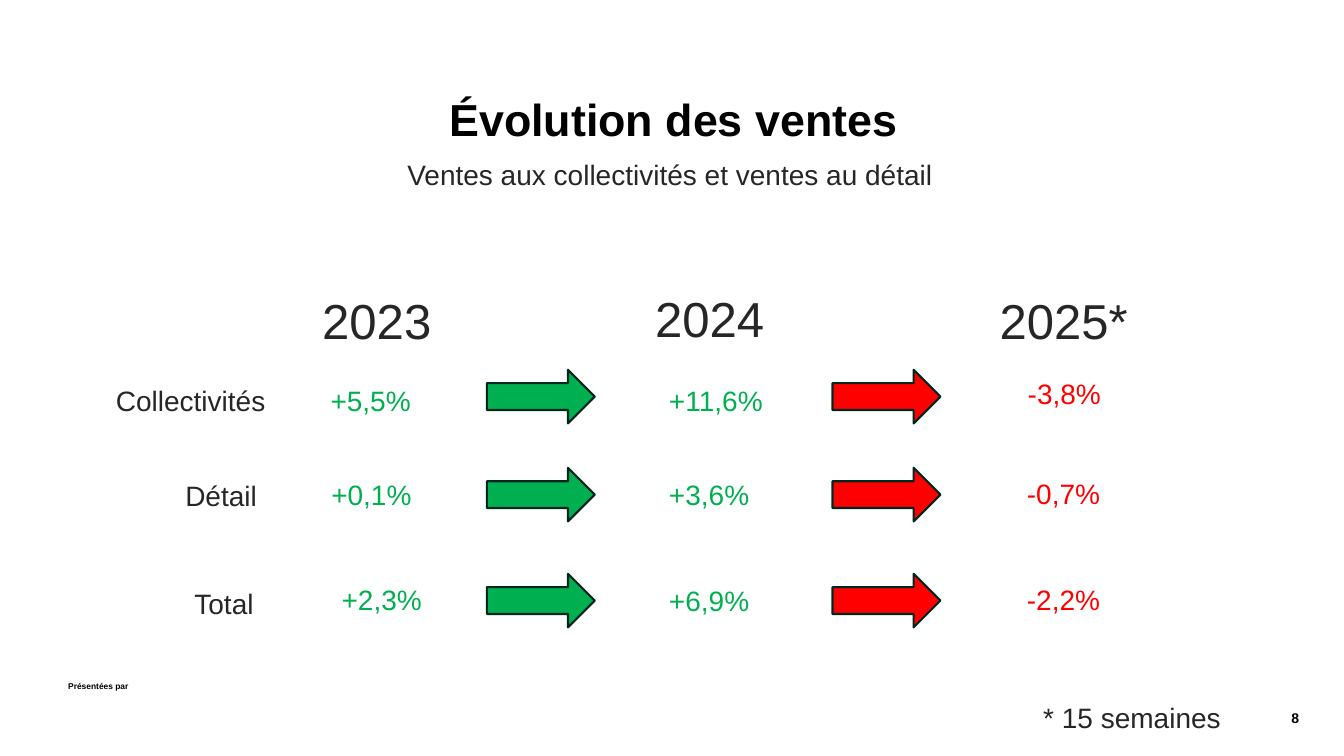
from pptx import Presentation
from pptx.dml.color import RGBColor
from pptx.enum.shapes import MSO_SHAPE
from pptx.enum.text import MSO_ANCHOR, MSO_AUTO_SIZE, PP_ALIGN
from pptx.util import Cm, Pt

RIGHT_ARROW = MSO_SHAPE.RIGHT_ARROW
TOP = MSO_ANCHOR.TOP
NO_AUTOFIT = MSO_AUTO_SIZE.NONE
LEFT = PP_ALIGN.LEFT
RIGHT = PP_ALIGN.RIGHT

BLACK = RGBColor(0x00, 0x00, 0x00)
DARK_GREY = RGBColor(0x26, 0x26, 0x26)
GREEN = RGBColor(0x00, 0xB0, 0x50)
RED = RGBColor(0xFF, 0x00, 0x00)
ARROW_LINE = RGBColor(0x00, 0x27, 0x1F)

FONT = "Arial"
ARROW_COLUMNS = ((12.27, GREEN), (20.98, RED))
VALUE_COLORS = (GREEN, GREEN, RED)

YEARS = (
    ("2023", 7.87, 7.19, 3.38, 35.1),
    ("2024", 16.26, 7.14, 3.38, 35.1),
    ("2025*", 24.94, 7.19, 4.45, 35),
)

ROWS = (
    (("Collectivités", 2.67, 9.53, 5.23), 9.32,
     (("+5,5%", 8.08, 9.55), ("+11,6%", 16.61, 9.55), ("-3,8%", 25.65, 9.37))),
    (("Détail", 4.42, 11.94, 3.73), 11.79,
     (("+0,1%", 8.1, 11.91), ("+3,6%", 16.61, 11.91), ("-0,7%", 25.63, 11.89))),
    (("Total", 4.65, 14.66, 3.73), 14.46,
     (("+2,3%", 8.36, 14.55), ("+6,9%", 16.61, 14.58), ("-2,2%", 25.63, 14.55))),
)


def write_text(shape, text, size, color, bold=False, align=LEFT):
    frame = shape.text_frame
    frame.word_wrap = True
    frame.auto_size = NO_AUTOFIT
    frame.vertical_anchor = TOP
    paragraph = frame.paragraphs[0]
    paragraph.text = text
    paragraph.alignment = align
    paragraph.space_before = Pt(0)
    paragraph.font.name = FONT
    paragraph.font.size = Pt(size)
    paragraph.font.bold = bold
    paragraph.font.color.rgb = color
    return paragraph


def fill_placeholder(shape, text, left, top, width, height, size, color, bold=False):
    shape.left, shape.top = Cm(left), Cm(top)
    shape.width, shape.height = Cm(width), Cm(height)
    return write_text(shape, text, size, color, bold)


def add_text(slide, text, left, top, width, height, size=20, color=DARK_GREY,
             bold=False, align=LEFT):
    box = slide.shapes.add_textbox(Cm(left), Cm(top), Cm(width), Cm(height))
    write_text(box, text, size, color, bold, align)


def add_arrow(slide, left, top, color):
    arrow = slide.shapes.add_shape(RIGHT_ARROW, Cm(left), Cm(top), Cm(2.72), Cm(1.35))
    arrow.shadow.inherit = False
    arrow.fill.solid()
    arrow.fill.fore_color.rgb = color
    arrow.line.color.rgb = ARROW_LINE
    arrow.line.width = Pt(1.5)


def add_sales_row(slide, label, arrow_top, values):
    add_text(slide, *label, 2.13)
    for (text, left, top), color in zip(values, VALUE_COLORS):
        add_text(slide, text, left, top, 3.02, 1.12, color=color)
    for left, color in ARROW_COLUMNS:
        add_arrow(slide, left, arrow_top, color)


def main():
    presentation = Presentation()
    presentation.slide_width, presentation.slide_height = Cm(33.87), Cm(19.05)
    slide = presentation.slides.add_slide(presentation.slide_layouts[0])

    title = fill_placeholder(slide.shapes.title, "Évolution des ventes",
                             11.07, 2.34, 12.8, 1.63, 32, BLACK, True)
    title.line_spacing = 0.9
    fill_placeholder(slide.placeholders[1], "Ventes aux collectivités et ventes au détail",
                     10.01, 3.84, 14.68, 1.42, 20, DARK_GREY)

    for year, left, top, width, size in YEARS:
        add_text(slide, year, left, top, width, 2.13, size)
    for label, arrow_top, values in ROWS:
        add_sales_row(slide, label, arrow_top, values)

    add_text(slide, "* 15 semaines", 26.04, 17.53, 5.23, 1.4)
    add_text(slide, "Présentées par", 1.47, 17.04, 2.06, 0.51, 6, BLACK, True)
    add_text(slide, "8", 27.25, 17.75, 5.74, 0.69, 10, BLACK, True, RIGHT)

    presentation.save("out.pptx")


if __name__ == "__main__":
    main()
